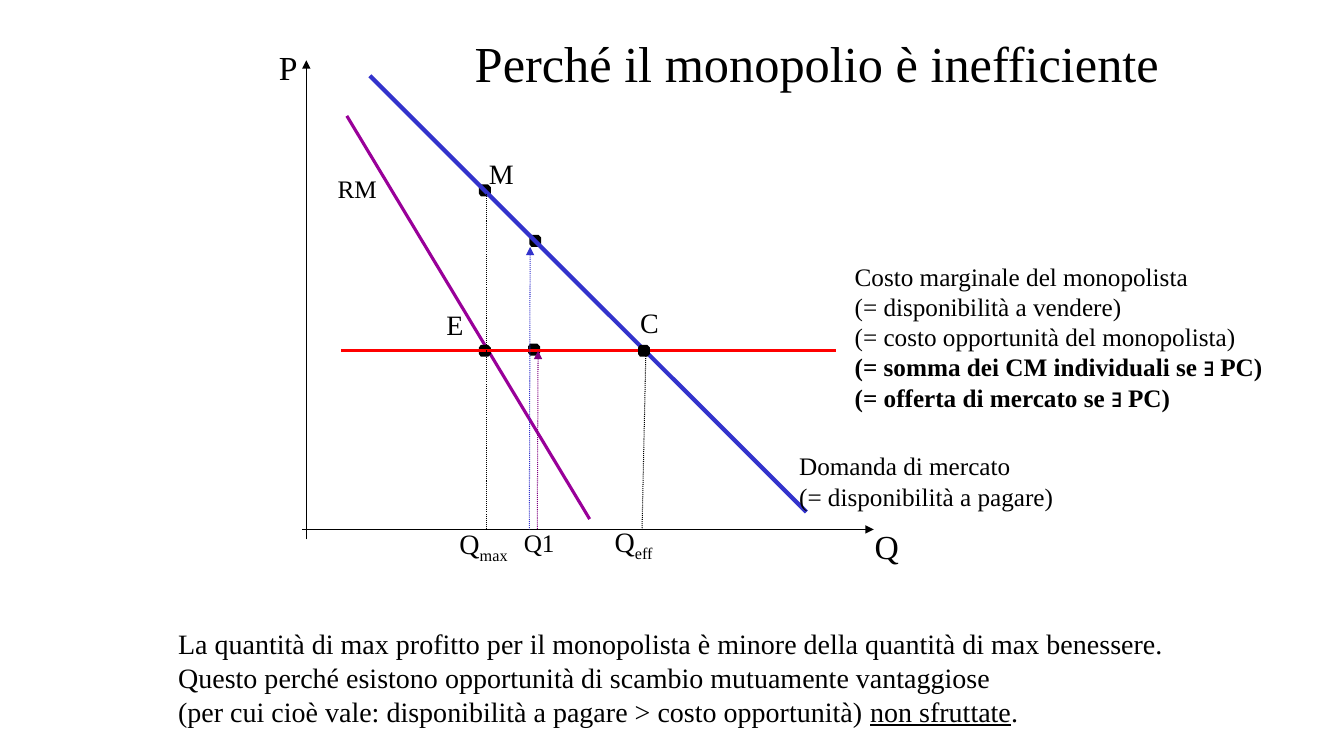
from collections import namedtuple

from lxml import etree
from pptx import Presentation
from pptx import util as u
from pptx.dml.color import RGBColor
from pptx.enum import dml, text
from pptx.oxml import ns

COLOURS = {
    "ink": "000000",
    "demand": "3333CC",
    "revenue": "990099",
    "cost": "FF0000",
    "revenue_guide": "800080",
}
FONT = "Times New Roman"
# Outline of a point marker, in hundredths of a centimetre
MARKER = [(18, 30), (23, 30), (30, 23), (30, 18), (30, 7), (23, 0),
          (18, 0), (5, 0), (0, 7), (0, 18), (0, 23), (5, 30)]

Box = namedtuple("Box", "left top width height")


def colour(name):
    return RGBColor.from_string(COLOURS[name])


def inside(region, left, top, width, height):
    """Box given by its offset from the corner of a region."""
    return Box(region.left + left, region.top + top, width, height)


def add_span(para, words, size=18, bold=False, underline=False, baseline=0):
    span = para.add_run()
    span.text = words
    font = span.font
    font.name, font.size = FONT, u.Pt(size)
    font.bold, font.underline = bold, underline
    font.color.rgb = colour("ink")
    if baseline:
        span._r.get_or_add_rPr().set("baseline", str(baseline * 1000))


def fill_text(frame, paragraphs, wrap=False, **style):
    """Each paragraph is a list of (words, extra format) pairs."""
    frame.word_wrap = wrap
    frame.auto_size = text.MSO_AUTO_SIZE.SHAPE_TO_FIT_TEXT
    frame.vertical_anchor = text.MSO_ANCHOR.TOP
    for index, spans in enumerate(paragraphs):
        para = frame.add_paragraph() if index else frame.paragraphs[0]
        para.alignment = text.PP_ALIGN.LEFT
        for words, extra in spans:
            add_span(para, words, **{**style, **extra})


def add_text(page, box, paragraphs, **style):
    shape = page.shapes.add_textbox(*map(u.Cm, box))
    fill_text(shape.text_frame, paragraphs, **style)


def add_line(page, region, start, end, name="ink", width=0.75,
             dotted=False, arrow=None):
    """Arrow is headEnd (at the start) or tailEnd (at the end)."""
    ends = [u.Cm(value) for x, y in (start, end)
            for value in (region.left + x, region.top + y)]
    line = page.shapes.add_connector(1, *ends)
    line.line.color.rgb = colour(name)
    line.line.width = u.Pt(width)
    if dotted:
        line.line.dash_style = dml.MSO_LINE.ROUND_DOT
    properties = line._element.spPr
    if arrow:
        stroke = properties.find(ns.qn("a:ln"))
        etree.SubElement(stroke, ns.qn("a:" + arrow), type="triangle")
    etree.SubElement(properties, ns.qn("a:effectLst"))


def add_marker(page, region, left, top):
    builder = page.shapes.build_freeform(*MARKER[0], scale=u.Cm(0.01))
    builder.add_line_segments(MARKER[1:], close=True)
    marker = builder.convert_to_shape(u.Cm(region.left + left),
                                      u.Cm(region.top + top))
    marker.fill.solid()
    marker.fill.fore_color.rgb = colour("ink")
    marker.line.fill.background()
    marker.shadow.inherit = False


def add_title(page, box):
    title = page.shapes.title
    title.left, title.top, title.width, title.height = map(u.Cm, box)
    fill_text(title.text_frame, [[("Perché il monopolio è inefficiente", {})]],
              size=36)


def add_curves(page, region):
    floor = region.height
    cost_level = 7.32
    add_line(page, region, (1.02, 1.4), (7.14, 11.56), "revenue", 2.25)
    for left, top in [(4.35, 7.17), (4.35, 3.13), (5.59, 7.14), (5.62, 4.4)]:
        add_marker(page, region, left, top)

    # Axes, demand and marginal cost
    add_line(page, region, (0, floor + 0.25), (0, 0), arrow="tailEnd")
    add_line(page, region, (-0.1, floor), (region.width, floor), arrow="tailEnd")
    add_line(page, region, (1.6, 0.39), (12.6, 11.38), "demand", 3)
    add_line(page, region, (0.87, cost_level), (13.34, cost_level), "cost", 2.25)
    add_marker(page, region, 8.36, 7.17)

    # Dotted guides down to the quantity axis
    for start, foot, name, arrow in [
        ((4.55, 3.36), 4.55, "ink", None),
        ((5.64, 4.7), 5.62, "demand", "headEnd"),
        ((5.84, cost_level), 5.82, "revenue_guide", "headEnd"),
        ((8.56, 7.19), 8.46, "ink", None),
    ]:
        add_line(page, region, start, (foot, floor), name,
                 dotted=True, arrow=arrow)


def add_labels(page, region):
    for words, size, place in [
        ("RM", 18, (0.54, 2.72, 1.5, 1.02)),
        ("M", 20, (4.35, 2.29, 1.14, 1.12)),
        ("C", 20, (8.16, 6.05, 0.99, 1.12)),
        ("E", 20, (3.28, 6.1, 0.94, 1.12)),
        ("P", 24, (-0.94, -0.45, 0.99, 1.27)),
        ("Q", 24, (14.07, 11.61, 1.14, 1.27)),
        ("Q1", 18, (5.23, 11.64, 1.3, 1.02)),
    ]:
        add_text(page, inside(region, *place), [[(words, {})]], size=size)

    # Quantities with a subscript
    for suffix, left, top in [("max", 3.61, 11.61), ("eff", 7.52, 11.56)]:
        add_text(page, inside(region, left, top, 2.11, 1.12),
                 [[("Q", {}), (suffix, {"baseline": -25})]],
                 wrap=True, size=20)

    # Names of the curves
    add_text(page, inside(region, 12.17, 9.71, 6.99, 1.8), [
        [("Domanda di mercato", {})],
        [("(= disponibilità a pagare)", {})],
    ])
    add_text(page, inside(region, 13.57, 4.93, 10.97, 4.11), [
        [("Costo marginale del monopolista", {})],
        [("(= disponibilità a vendere)", {})],
        [("(= costo opportunità del monopolista)", {})],
        [("(= somma dei CM individuali se ∃ PC)", {"bold": True})],
        [("(= offerta di mercato se ∃ PC)", {"bold": True})],
    ])


def add_conclusion(page, box):
    add_text(page, box, [
        [("La quantità di max profitto per il monopolista è minore "
          "della quantità di max benessere.", {})],
        [("Questo perché esistono opportunità di scambio "
          "mutuamente vantaggiose", {})],
        [("(per cui cioè vale: disponibilità a pagare > costo opportunità) ", {}),
         ("non sfruttate", {"underline": True}), (".", {})],
    ], size=20)


def main():
    deck = Presentation()
    deck.slide_width, deck.slide_height = u.Cm(33.87), u.Cm(19.05)
    page = deck.slides.add_slide(deck.slide_layouts[5])
    diagram = Box(7.72, 1.52, 14.3, 11.82)
    add_curves(page, diagram)
    add_labels(page, diagram)
    add_conclusion(page, Box(4.24, 15.67, 25.48, 2.82))
    add_title(page, Box(11.71, 0.69, 17.93, 1.8))
    deck.save("out.pptx")


if __name__ == "__main__":
    main()
